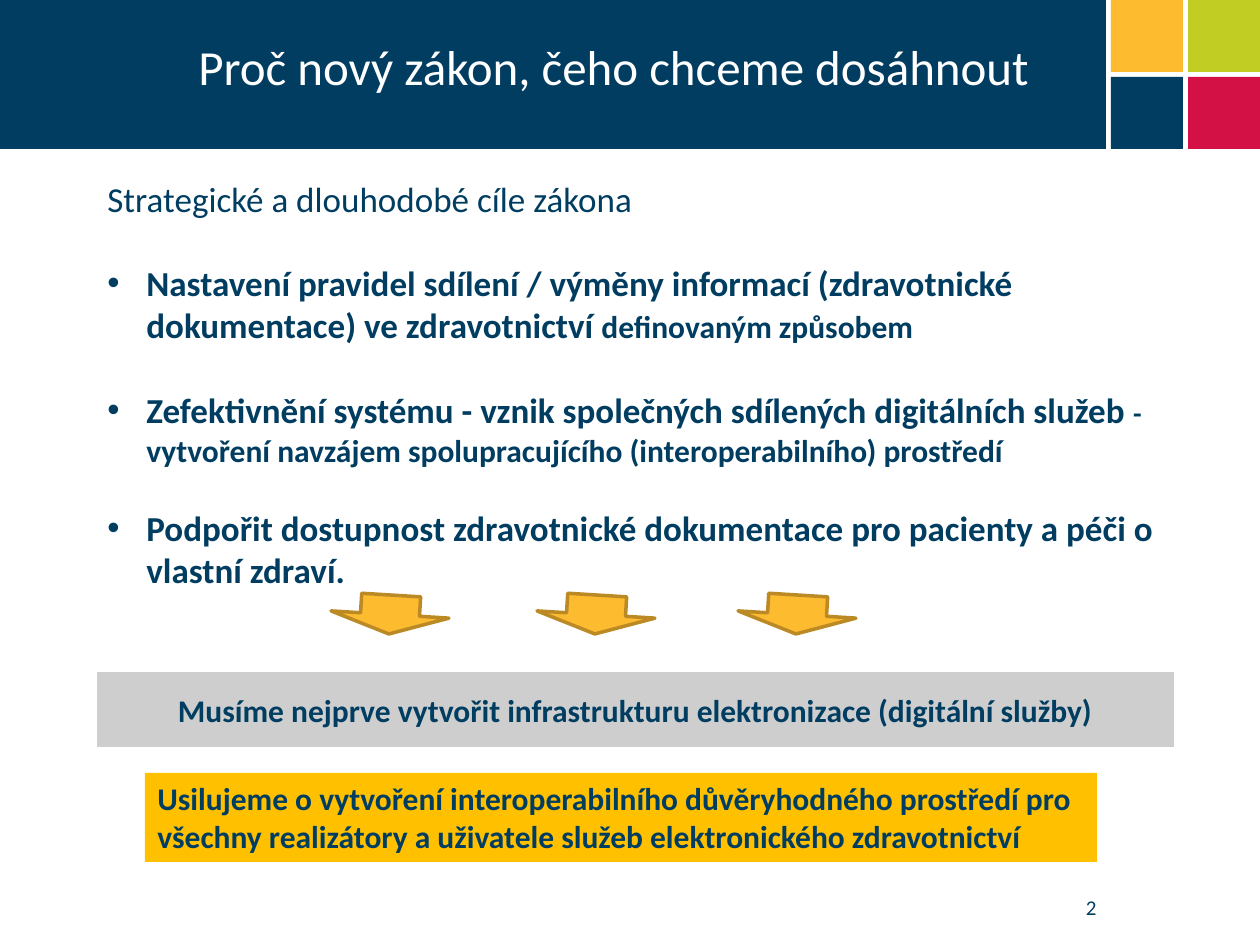
from dataclasses import dataclass
from typing import Optional

from lxml import etree
from pptx import Presentation
from pptx.dml.color import RGBColor
from pptx.oxml.ns import qn
from pptx.util import Emu, Pt
from pptx.enum import shapes, text

PX = 914400 / 126  # EMU in one px
FONT = "Calibri"
NAVY, YELLOW, LIME, RED = "003D61", "FDBB30", "C2CD23", "D31145"
WHITE, GREY, AMBER, BROWN = "FFFFFF", "CECECE", "FFC000", "BB8A24"
SHAPE, ALIGN, ANCHOR = shapes.MSO_SHAPE, text.PP_ALIGN, text.MSO_ANCHOR


@dataclass
class Box:
    left: int
    top: int
    width: int
    height: int

    def emu(self) -> list[Emu]:
        return [px(n) for n in (self.left, self.top, self.width, self.height)]


@dataclass
class Para:
    runs: list[tuple[str, int]]  # wording and size in points
    bold: bool = False
    color: str = NAVY
    align: ALIGN = ALIGN.LEFT
    bullet: bool = False
    before: float = 0


def px(n: int) -> Emu:
    return Emu(round(n * PX))


def rgb(color: str) -> RGBColor:
    return RGBColor.from_string(color)


def add_bullet(paragraph, indent: int = 39) -> None:
    properties = paragraph._p.get_or_add_pPr()
    properties.set("marL", str(px(indent)))
    properties.set("indent", str(px(-indent)))
    etree.SubElement(properties, qn("a:buFont")).set("typeface", "Arial")
    etree.SubElement(properties, qn("a:buChar")).set("char", "•")


def write(shape, paras: list[Para], anchor: ANCHOR = ANCHOR.TOP) -> None:
    frame = shape.text_frame
    frame.word_wrap = True
    frame.vertical_anchor = anchor
    for i, para in enumerate(paras):
        paragraph = frame.add_paragraph() if i else frame.paragraphs[0]
        paragraph.alignment = para.align
        if para.before:
            paragraph.space_before = Pt(para.before)
        if para.bullet:
            add_bullet(paragraph)
        font = paragraph.font
        font.name, font.bold, font.size = FONT, para.bold, Pt(para.runs[0][1])
        font.color.rgb = rgb(para.color)
        for wording, size in para.runs:
            run = paragraph.add_run()
            run.text = wording
            if len(para.runs) > 1:
                run.font.size = Pt(size)


def add_shape(slide, box: Box, fill: str, line: Optional[str] = None,
              kind: SHAPE = SHAPE.RECTANGLE, rotation: float = 0):
    shape = slide.shapes.add_shape(kind, *box.emu())
    shape.shadow.inherit = False
    shape.fill.solid()
    shape.fill.fore_color.rgb = rgb(fill)
    if line:
        shape.line.color.rgb = rgb(line)
        shape.line.width = Pt(2)
    else:
        shape.line.fill.background()
    shape.rotation = rotation
    return shape


def add_text(slide, box: Box, paras: list[Para], anchor: ANCHOR = ANCHOR.TOP) -> None:
    write(slide.shapes.add_textbox(*box.emu()), paras, anchor)


GOALS = [
    Para([("Strategické a dlouhodobé cíle zákona", 20)]),
    Para([("Nastavení pravidel sdílení / výměny informací (zdravotnické "
           "dokumentace) ve zdravotnictví ", 20),
          ("definovaným způsobem", 18)], bold=True, bullet=True, before=24.4),
    Para([("Zefektivnění systému - vznik společných sdílených digitálních služeb ", 20),
          ("- ", 16),
          ("vytvoření navzájem spolupracujícího (interoperabilního) prostředí", 18)],
         bold=True, bullet=True, before=24.4),
    Para([("Podpořit dostupnost zdravotnické dokumentace pro pacienty a péči o "
           "vlastní zdraví.", 20)], bold=True, bullet=True, before=22),
]
INFRASTRUCTURE = Para([("Musíme nejprve vytvořit infrastrukturu elektronizace "
                        "(digitální služby)", 18)], bold=True, align=ALIGN.CENTER)
AIM = Para([("Usilujeme o vytvoření interoperabilního důvěryhodného prostředí pro všechny "
             "realizátory a uživatele služeb elektronického zdravotnictví", 18)], bold=True)


def main() -> None:
    presentation = Presentation()
    presentation.slide_width, presentation.slide_height = px(1260), px(945)
    slide = presentation.slides.add_slide(presentation.slide_layouts[6])

    # Header band and coloured tiles
    add_shape(slide, Box(0, 0, 1106, 149), NAVY)
    for i, color in enumerate((YELLOW, LIME, NAVY, RED)):
        row, column = divmod(i, 2)
        add_shape(slide, Box(1111 + 77 * column, 77 * row, 72, 72), color)
    add_text(slide, Box(186, 30, 936, 145),
             [Para([("Proč nový zákon, čeho chceme dosáhnout", 28)], color=WHITE)])

    # Goals
    add_text(slide, Box(95, 171, 1101, 428), GOALS)

    # Arrows pointing down to the conclusions
    for left in (331, 537, 738):
        add_shape(slide, Box(left, 595, 118, 39), YELLOW, BROWN, SHAPE.UP_ARROW, 183.5)

    # Conclusions
    bar = add_shape(slide, Box(95, 670, 1081, 79), GREY, WHITE)
    write(bar, [INFRASTRUCTURE], ANCHOR.MIDDLE)
    aim = add_shape(slide, Box(145, 773, 952, 89), AMBER)
    write(aim, [AIM])

    # Slide number
    add_text(slide, Box(856, 861, 253, 65), [Para([("2", 12)], align=ALIGN.RIGHT)],
             ANCHOR.BOTTOM)

    presentation.save("out.pptx")


if __name__ == "__main__":
    main()
